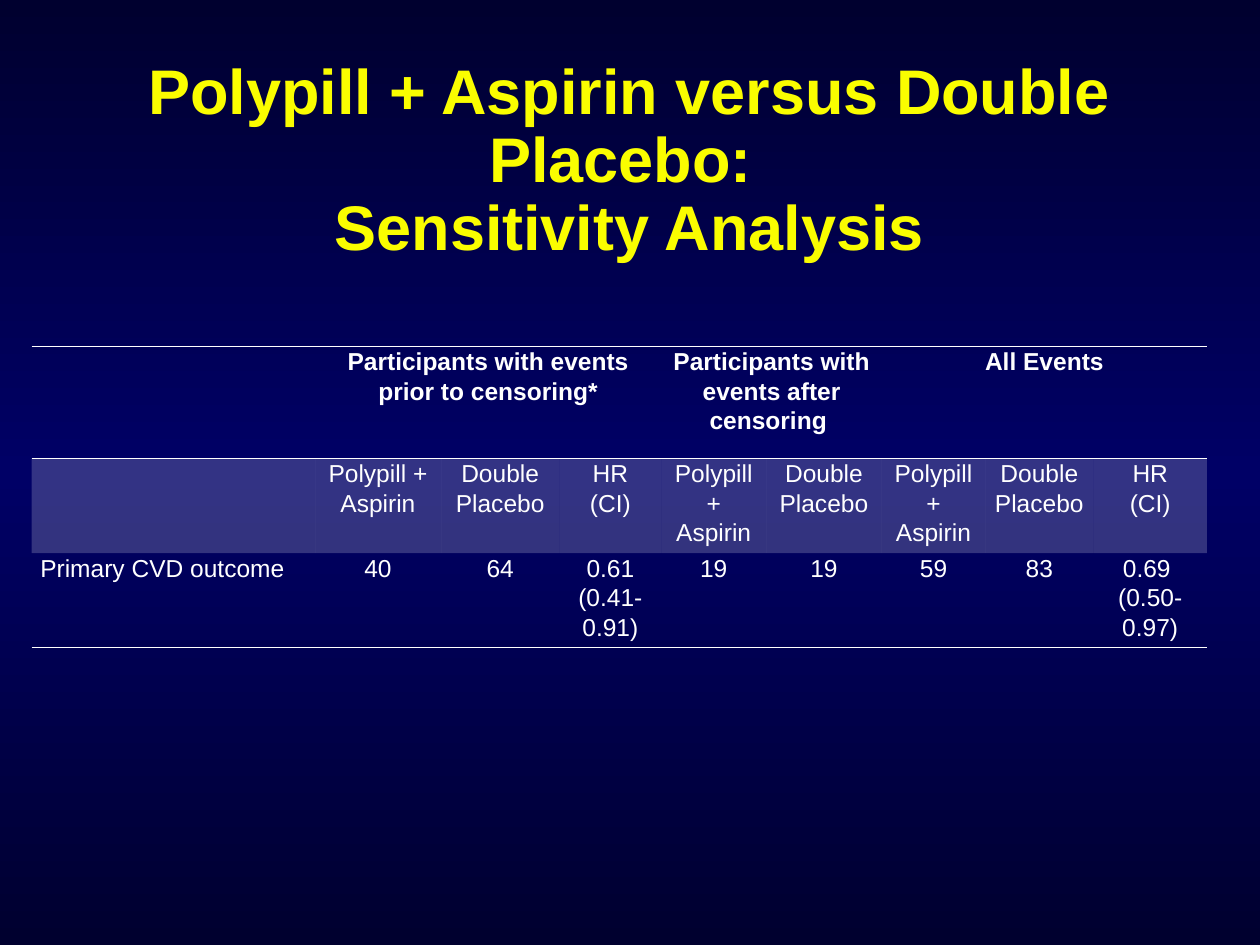
"""Build the sensitivity analysis slide with its table of trial outcomes."""
from copy import deepcopy
from dataclasses import dataclass

from lxml import etree
from pptx import Presentation
from pptx.dml.color import RGBColor
from pptx.enum.text import MSO_ANCHOR, MSO_AUTO_SIZE, PP_ALIGN
from pptx.oxml.ns import qn
from pptx.util import Inches, Pt

CENTER, LEFT = PP_ALIGN.CENTER, PP_ALIGN.LEFT
BOTTOM = MSO_ANCHOR.BOTTOM
GROW = MSO_AUTO_SIZE.SHAPE_TO_FIT_TEXT
WHITE = RGBColor(0xFF, 0xFF, 0xFF)
YELLOW = RGBColor(0xFA, 0xFD, 0x00)
NAVY = RGBColor(0x00, 0x00, 0x2F)
BLUE = RGBColor(0x00, 0x00, 0x66)
FONT = "Arial"
PLAIN_STYLE = "{2D5ABB26-0587-4C30-8999-92F81FD0307C}"
COLUMN_WIDTHS = (2.25, 1, 0.94, 0.81, 0.83, 0.92, 0.82, 0.86, 0.9)
ROW_HEIGHTS = (0.89, 0.71, 0.49)


@dataclass
class Group:
    text: str
    first: int
    span: int


@dataclass
class RowStyle:
    row: int
    borders: tuple[str, ...] = ()
    shaded: bool = False


GROUPS = (
    Group("Participants with events prior to censoring*", 1, 3),
    Group("Participants with events after censoring ", 4, 2),
    Group("All Events", 6, 3),
)
ARMS = ("Polypill + Aspirin", "Double Placebo")
RATIO = "HR\n(CI)"
HEADINGS = ("", *ARMS, RATIO, *ARMS, *ARMS, RATIO)
OUTCOME = ("Primary CVD outcome", "40", "64", "0.61\n(0.41-0.91)",
           "19", "19", "59", "83", "0.69 \n(0.50- 0.97)")
ROW_STYLES = (
    RowStyle(0, borders=("a:lnT", "a:lnB")),
    RowStyle(1, shaded=True),
    RowStyle(2, borders=("a:lnB",)),
)


def write_text(frame, text: str, *, size: float, color: RGBColor, bold: bool = False,
               align=CENTER, spacing: float = 1.0) -> None:
    frame.text = text
    for para in frame.paragraphs:
        para.alignment = align
        para.line_spacing = spacing
        for span in para.runs:
            span.font.name = FONT
            span.font.size = Pt(size)
            span.font.bold = bold
            span.font.color.rgb = color


def write_cell(cell, text: str, bold: bool = False, align=CENTER) -> None:
    write_text(cell.text_frame, text, size=14, color=WHITE, bold=bold,
               align=align, spacing=1.07)


def style_cell(cell, style: RowStyle) -> None:
    cell.margin_left = cell.margin_right = Inches(0.07)
    cell.margin_top = cell.margin_bottom = 0
    properties = cell._tc.get_or_add_tcPr()
    for side in style.borders:
        line = etree.SubElement(properties, qn(side), w=str(Pt(1)))
        paint = etree.SubElement(line, qn("a:solidFill"))
        etree.SubElement(paint, qn("a:srgbClr"), val=str(WHITE))
    if style.shaded:
        cell.fill.solid()
        cell.fill.fore_color.rgb = WHITE
        color = properties.find(".//" + qn("a:srgbClr"))
        etree.SubElement(color, qn("a:alpha"), val="20000")
    else:
        cell.fill.background()


def paint_background(page) -> None:
    fill = page.background.fill
    fill.gradient()
    fill.gradient_angle = 270
    for stop, color, position in zip(fill.gradient_stops, (NAVY, BLUE), (0, 0.5)):
        stop.color.rgb = color
        stop.position = position
    stops = page.element.find(".//" + qn("a:gsLst"))
    last = deepcopy(stops[0])
    last.set("pos", "100000")
    stops.append(last)


def add_title(page) -> None:
    title = page.shapes.title
    title.left, title.top = Inches(0.62), Inches(0.42)
    title.width, title.height = Inches(8.75), Inches(1.73)
    frame = title.text_frame
    frame.word_wrap = True
    frame.auto_size = GROW
    frame.vertical_anchor = BOTTOM
    write_text(frame, "Polypill + Aspirin versus Double Placebo: \vSensitivity Analysis",
               size=36, color=YELLOW, bold=True, spacing=0.9)


def add_results(page) -> None:
    holder = page.shapes.add_table(
        len(ROW_HEIGHTS), len(COLUMN_WIDTHS), Inches(0.25), Inches(2.75),
        Inches(sum(COLUMN_WIDTHS)), Inches(sum(ROW_HEIGHTS)))
    table = holder.table
    table.first_row = table.horz_banding = False
    table._tbl.tblPr.find(qn("a:tableStyleId")).text = PLAIN_STYLE
    for column, width in zip(table.columns, COLUMN_WIDTHS):
        column.width = Inches(width)
    for row, height in zip(table.rows, ROW_HEIGHTS):
        row.height = Inches(height)
    for style in ROW_STYLES:
        for cell in table.rows[style.row].cells:
            style_cell(cell, style)
    for group in GROUPS:
        cell = table.cell(0, group.first)
        cell.merge(table.cell(0, group.first + group.span - 1))
        write_cell(cell, group.text, bold=True)
    for row, texts in enumerate((HEADINGS, OUTCOME), start=1):
        for column, text in enumerate(texts):
            write_cell(table.cell(row, column), text, align=CENTER if column else LEFT)


def main() -> None:
    deck = Presentation()
    deck.slide_width, deck.slide_height = Inches(10), Inches(7.5)
    page = deck.slides.add_slide(deck.slide_layouts[5])
    paint_background(page)
    add_title(page)
    add_results(page)
    deck.save("out.pptx")


if __name__ == "__main__":
    main()
